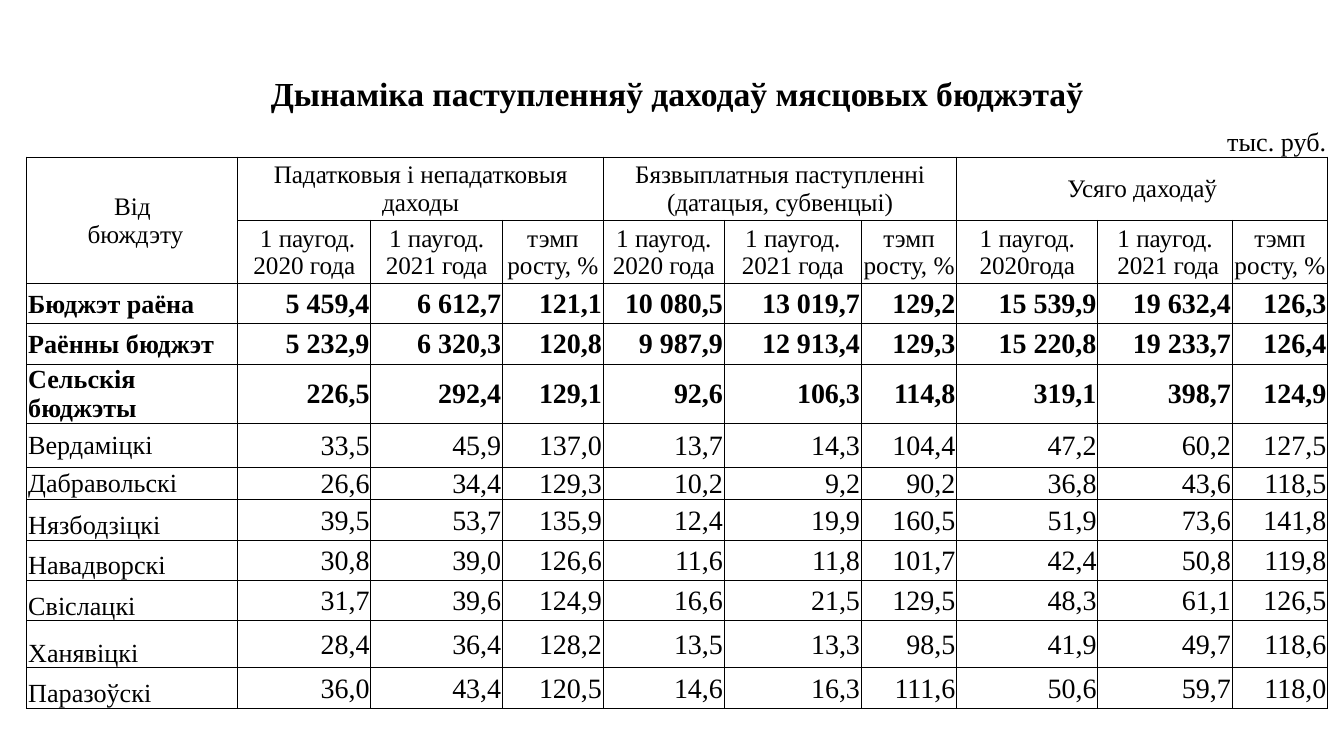
from lxml.etree import SubElement
from pptx import Presentation
from pptx.dml.color import RGBColor
from pptx.enum.text import MSO_ANCHOR, PP_ALIGN
from pptx.oxml.ns import qn
from pptx.util import Inches, Pt

COLORS = {"text": "000000", "border": "000000"}
FONT = "Times New Roman"
PLAIN_STYLE = "{2D5ABB26-0587-4C30-8999-92F81FD0307C}"

TITLE = "Дынаміка паступленняў даходаў мясцовых бюджэтаў"
UNIT = "тыс. руб."
BUDGET_HEADER = "Вiд\n бюждэту"
GROUPS = [
    "Падатковыя і непадатковыя даходы",
    "Бязвыплатныя паступленні (датацыя, субвенцыі)",
    "Усяго даходаў",
]
GROWTH = "тэмп\nросту, %"
PERIODS = [
    " 1 паугод. 2020 года", "1 паугод. 2021 года", GROWTH,
    "1 паугод.\n2020 года", "1 паугод. 2021 года", GROWTH,
    "1 паугод. 2020года", "1 паугод.\n 2021 года", GROWTH,
]
BUDGETS = [
    ("Бюджэт раёна", "5 459,4", "6 612,7", "121,1", "10 080,5", "13 019,7", "129,2", "15 539,9", "19 632,4", "126,3"),
    ("Раённы бюджэт", "5 232,9", "6 320,3", "120,8", "9 987,9", "12 913,4", "129,3", "15 220,8", "19 233,7", "126,4"),
    ("Сельскія бюджэты", "226,5", "292,4", "129,1", "92,6", "106,3", "114,8", "319,1", "398,7", "124,9"),
    ("Вердаміцкі", "33,5", "45,9", "137,0", "13,7", "14,3", "104,4", "47,2", "60,2", "127,5"),
    ("Дабравольскі", "26,6", "34,4", "129,3", "10,2", "9,2", "90,2", "36,8", "43,6", "118,5"),
    ("Нязбодзіцкі", "39,5", "53,7", "135,9", "12,4", "19,9", "160,5", "51,9", "73,6", "141,8"),
    ("Навадворскі", "30,8", "39,0", "126,6", "11,6", "11,8", "101,7", "42,4", "50,8", "119,8"),
    ("Свіслацкі", "31,7", "39,6", "124,9", "16,6", "21,5", "129,5", "48,3", "61,1", "126,5"),
    ("Ханявіцкі", "28,4", "36,4", "128,2", "13,5", "13,3", "98,5", "41,9", "49,7", "118,6"),
    ("Паразоўскі", "36,0", "43,4", "120,5", "14,6", "16,3", "111,6", "50,6", "59,7", "118,0"),
]
COLUMN_WIDTHS = [1.57, 0.99, 0.84, 0.14, 0.75, 0.9, 0.21, 0.81, 0.71, 1.05, 0.85, 0.15, 0.71]
ROW_HEIGHTS = [0.32, 0.32, 0.47, 0.47, 0.3, 0.3, 0.3, 0.33, 0.24, 0.3, 0.3, 0.3, 0.35, 0.3]
LEFT, TOP, WIDTH, HEIGHT = 0.2, 0.53, 9.69, 4.82

TITLE_ROW, UNIT_ROW, GROUP_ROW, PERIOD_ROW, FIRST_BUDGET_ROW = range(5)
LAST_COLUMN = len(COLUMN_WIDTHS) - 1
GROUP_STARTS = [1, 5, 9]
VALUE_COLUMNS = [start + offset for start in GROUP_STARTS for offset in (0, 1, 3)]
TOTAL_ROWS = 3
TOP_ANCHORED_ROW = 4


def style_cell(cell, bordered_sides):
    cell.margin_left = cell.margin_top = cell.margin_right = Inches(0.01)
    cell.margin_bottom = 0
    properties = cell._tc.get_or_add_tcPr()
    for side in "LRTB":
        line = SubElement(properties, qn(f"a:ln{side}"), w=str(Pt(0.5)))
        if side in bordered_sides:
            fill = SubElement(line, qn("a:solidFill"))
            SubElement(fill, qn("a:srgbClr"), val=COLORS["border"])
        else:
            SubElement(line, qn("a:noFill"))
    cell.fill.background()


def write(cell, text, size, alignment, anchor=MSO_ANCHOR.MIDDLE, bold=False):
    cell.text_frame.text = text
    cell.vertical_anchor = anchor
    for paragraph in cell.text_frame.paragraphs:
        paragraph.alignment = alignment
        for run in paragraph.runs:
            run.font.name = FONT
            run.font.size = Pt(size)
            run.font.bold = bold
            run.font.color.rgb = RGBColor.from_string(COLORS["text"])


def merge(table, row, first, last, last_row=None):
    table.cell(row, first).merge(table.cell(last_row or row, last))


presentation = Presentation()
presentation.slide_width = Inches(10)
presentation.slide_height = Inches(10 * 9 / 16)
slide = presentation.slides.add_slide(presentation.slide_layouts[6])

frame = slide.shapes.add_table(
    len(ROW_HEIGHTS), len(COLUMN_WIDTHS),
    Inches(LEFT), Inches(TOP), Inches(WIDTH), Inches(HEIGHT))
table = frame.table
table.first_row = table.horz_banding = False
table._tbl.tblPr.find(qn("a:tableStyleId")).text = PLAIN_STYLE
for column, width in zip(table.columns, COLUMN_WIDTHS):
    column.width = Inches(width)
for row, height in zip(table.rows, ROW_HEIGHTS):
    row.height = Inches(height)
frame.height = Inches(HEIGHT)

for row_index, row in enumerate(table.rows):
    sides = {TITLE_ROW: "", UNIT_ROW: "B"}.get(row_index, "LRTB")
    for cell in row.cells:
        style_cell(cell, sides)

merge(table, TITLE_ROW, 0, LAST_COLUMN)
for first, last in [(1, 2), (3, 6), (7, 8), (11, 12)]:
    merge(table, UNIT_ROW, first, last)
merge(table, GROUP_ROW, 0, 0, PERIOD_ROW)
for start in GROUP_STARTS:
    merge(table, GROUP_ROW, start, start + 3)
    for row_index in range(PERIOD_ROW, len(ROW_HEIGHTS)):
        merge(table, row_index, start + 1, start + 2)

write(table.cell(TITLE_ROW, 0), TITLE, 18, PP_ALIGN.CENTER, MSO_ANCHOR.BOTTOM, True)
write(table.cell(UNIT_ROW, 11), UNIT, 14, PP_ALIGN.RIGHT, MSO_ANCHOR.BOTTOM)
write(table.cell(GROUP_ROW, 0), BUDGET_HEADER, 13.5, PP_ALIGN.CENTER)
for start, group in zip(GROUP_STARTS, GROUPS):
    write(table.cell(GROUP_ROW, start), group, 13.5, PP_ALIGN.CENTER)
for column_index, period in zip(VALUE_COLUMNS, PERIODS):
    write(table.cell(PERIOD_ROW, column_index), period, 13.5, PP_ALIGN.CENTER)

for index, (name, *values) in enumerate(BUDGETS):
    row_index = FIRST_BUDGET_ROW + index
    bold = index < TOTAL_ROWS
    value_anchor = MSO_ANCHOR.TOP if index == TOP_ANCHORED_ROW else MSO_ANCHOR.MIDDLE
    name_anchor = MSO_ANCHOR.BOTTOM if index > TOP_ANCHORED_ROW else value_anchor
    write(table.cell(row_index, 0), name, 14, PP_ALIGN.LEFT, name_anchor, bold)
    for column_index, value in zip(VALUE_COLUMNS, values):
        write(table.cell(row_index, column_index), value, 15, PP_ALIGN.RIGHT, value_anchor, bold)

presentation.save("out.pptx")
